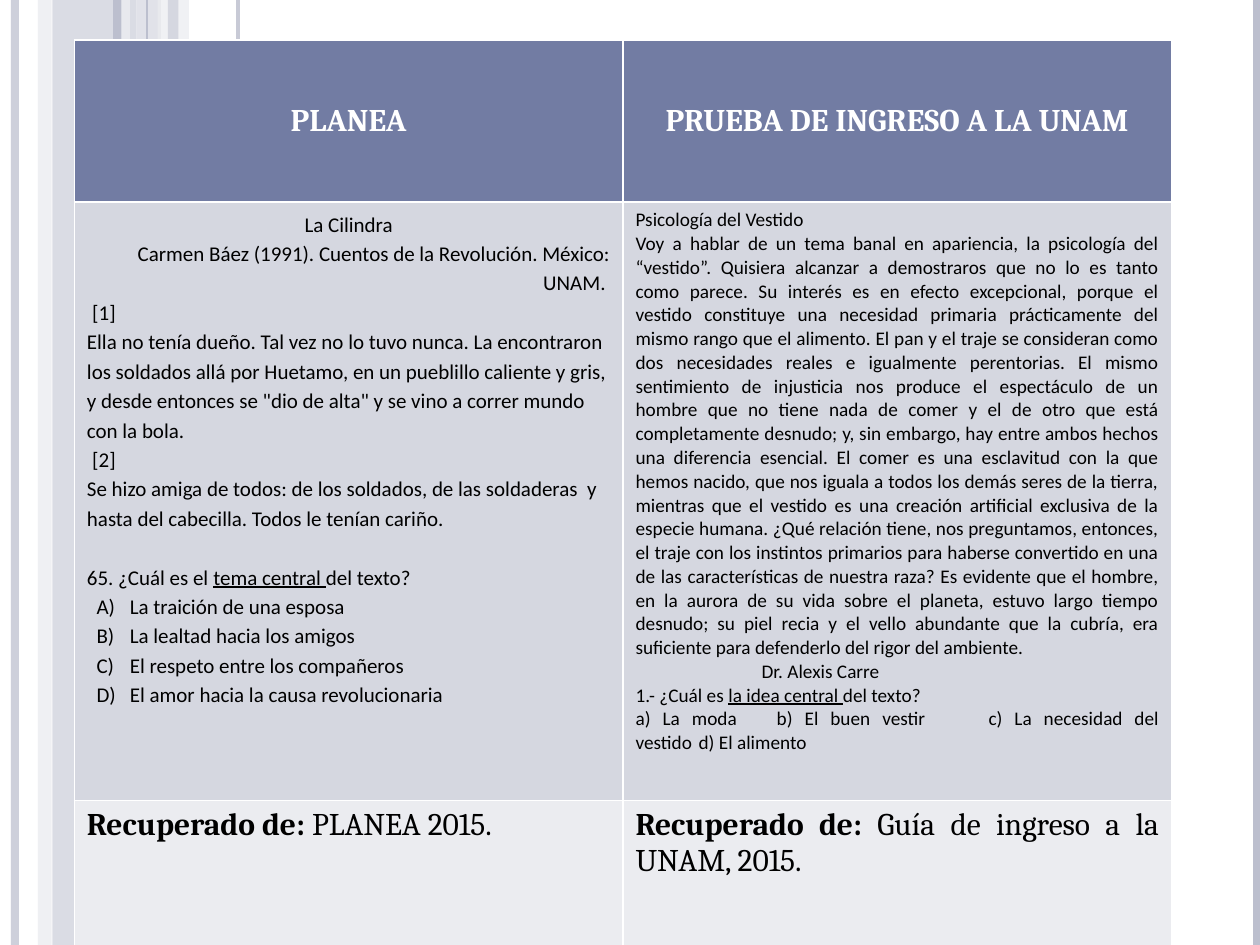
from dataclasses import dataclass

from pptx import Presentation
from pptx.dml.color import RGBColor
from pptx.enum import shapes, text
from pptx.oxml import ns, xmlchemy
from pptx.util import Pt

WIDTH, HEIGHT = 720, 540
HEX = {"head": "727CA3", "mid": "BCBFCE", "soft": "D5D7E0", "pale": "EBECF0",
       "ink": "000000", "white": "FFFFFF"}
ALIGN = text.PP_ALIGN


@dataclass
class Band:
    left: float
    width: float
    tone: str
    alpha: int


@dataclass
class Rule:
    x: float
    weight: float
    tone: str
    alpha: int = 100


@dataclass
class Para:
    """One paragraph; its words alternate plain and marked runs."""
    words: tuple[str, ...]
    align: ALIGN = ALIGN.LEFT
    margin: float = 0
    indent: float = 0
    before: float = 0


@dataclass
class Style:
    font: str
    size: float
    tone: str = "ink"
    mark: str = ""
    bold: bool = False
    space: float = 1.0


# Background stripes, from back to front
BANDS = [Band(30, 48, "mid", 54), Band(21.6, 8, "soft", 36),
         Band(78, 14, "soft", 70), Band(90, 18, "pale", 71)]
RULES = [Rule(8.5, 4.5, "mid", 73), Rule(72, 4.5, "pale", 83),
         Rule(67, 4.5, "mid"), Rule(136, 2.25, "mid", 82),
         Rule(84, 0.75, "mid"), Rule(718, 4.5, "mid")]
FRONT = Band(96, 6, "mid", 51)

# Text of the table
HEAD = Style("Cambria", 18, "white", bold=True)
STORY = Style("Calibri", 12, mark="underline", space=1.15)
ESSAY = Style("Calibri", 11, mark="underline")
SOURCE = Style("Cambria", 18, mark="bold")

OPTIONS = ["La traición de una esposa", "La lealtad hacia los amigos",
           "El respeto entre los compañeros",
           "El amor hacia la causa revolucionaria"]
CILINDRA = [
    Para(("La Cilindra",), ALIGN.CENTER),
    Para(("Carmen Báez (1991). Cuentos de la Revolución. México: UNAM. ",),
         ALIGN.RIGHT),
    Para(("[1]",), margin=3),
    Para(("Ella no tenía dueño. Tal vez no lo tuvo nunca. La encontraron los "
          "soldados allá por Huetamo, en un pueblillo caliente y gris, y desde "
          "entonces se \"dio de alta\" y se vino a correr mundo con la bola.",)),
    Para(("[2]",), margin=3),
    Para(("Se hizo amiga de todos: de los soldados, de las soldaderas  y hasta "
          "del cabecilla. Todos le tenían cariño.",)),
    Para(("65. ¿Cuál es el ", "tema central ", "del texto?"), before=16.8),
] + [Para((f"{key})\t{item}",), margin=24.5, indent=-19)
     for key, item in zip("ABCD", OPTIONS)]

# The long paragraph, in two halves
OPENING = (
    "Voy a hablar de un tema banal en apariencia, la psicología del “vestido”. "
    "Quisiera alcanzar a demostraros que no lo es tanto como parece. Su interés "
    "es en efecto excepcional, porque el vestido constituye una necesidad "
    "primaria prácticamente del mismo rango que el alimento. El pan y el traje "
    "se consideran como dos necesidades reales e igualmente perentorias. El "
    "mismo sentimiento de injusticia nos produce el espectáculo de un hombre "
    "que no tiene nada de comer y el de otro que está completamente desnudo; y, "
    "sin embargo, hay entre ambos hechos una diferencia esencial.")
CLOSING = (
    "El comer es una esclavitud con la que hemos nacido, que nos iguala a todos "
    "los demás seres de la tierra, mientras que el vestido es una creación "
    "artificial exclusiva de la especie humana. ¿Qué relación tiene, nos "
    "preguntamos, entonces, el traje con los instintos primarios para haberse "
    "convertido en una de las características de nuestra raza? Es evidente que "
    "el hombre, en la aurora de su vida sobre el planeta, estuvo largo tiempo "
    "desnudo; su piel recia y el vello abundante que la cubría, era suficiente "
    "para defenderlo del rigor del ambiente.")
VESTIDO = [Para(words, ALIGN.JUSTIFY) for words in (
    ("Psicología del Vestido",),
    (f"{OPENING} {CLOSING}",),
    ("\t\tDr. Alexis Carre",),
    ("1.- ¿Cuál es ", "la idea central ", "del texto?"),
    ("a) La moda\tb) El buen vestir\tc) La necesidad del vestido\td) El alimento",),
)]

# Each row: height, fill, then a style and paragraphs for each column
ROWS = [
    (92.5, "head", [(HEAD, [Para(("PLANEA",), ALIGN.CENTER)]),
                    (HEAD, [Para(("PRUEBA DE INGRESO A LA UNAM",), ALIGN.CENTER)])]),
    (342, "soft", [(STORY, CILINDRA), (ESSAY, VESTIDO)]),
    (83, "pale", [(SOURCE, [Para(("", "Recuperado de: ", "PLANEA 2015."))]),
                  (SOURCE, [Para(("", "Recuperado de: ",
                                  "Guía de ingreso a la UNAM, 2015."),
                                 ALIGN.JUSTIFY)])]),
]


def tint(name: str) -> RGBColor:
    return RGBColor.from_string(HEX[name])


def fade(shape, alpha: int) -> None:
    """Make the colour of a shape or line partly transparent."""
    if alpha < 100:
        color = next(shape._element.spPr.iter(ns.qn("a:srgbClr")))
        node = xmlchemy.OxmlElement("a:alpha")
        node.set("val", str(alpha * 1000))
        color.append(node)


def draw_band(slide, band: Band) -> None:
    shape = slide.shapes.add_shape(shapes.MSO_SHAPE.RECTANGLE, Pt(band.left), 0,
                                   Pt(band.width), Pt(HEIGHT))
    shape.shadow.inherit = False
    shape.line.fill.background()
    shape.fill.solid()
    shape.fill.fore_color.rgb = tint(band.tone)
    fade(shape, band.alpha)


def draw_rule(slide, rule: Rule) -> None:
    line = slide.shapes.add_connector(shapes.MSO_CONNECTOR.STRAIGHT, Pt(rule.x), 0,
                                      Pt(rule.x), Pt(HEIGHT))
    line.line.width = Pt(rule.weight)
    line.line.color.rgb = tint(rule.tone)
    fade(line, rule.alpha)
    line._element.spPr.append(xmlchemy.OxmlElement("a:effectLst"))


def write(cell, style: Style, paras: list[Para]) -> None:
    frame = cell.text_frame
    for num, para in enumerate(paras):
        line = frame.add_paragraph() if num else frame.paragraphs[0]
        line.alignment = para.align
        line.line_spacing = style.space
        line.space_before = Pt(para.before)
        props = line._p.get_or_add_pPr()
        props.set("marL", str(int(Pt(para.margin))))
        props.set("indent", str(int(Pt(para.indent))))
        for spot, words in enumerate(para.words):
            if not words:
                continue
            run = line.add_run()
            run.text = words
            run.font.name = style.font
            run.font.size = Pt(style.size)
            run.font.bold = style.bold
            run.font.color.rgb = tint(style.tone)
            if spot % 2:
                setattr(run.font, style.mark, True)


def draw_table(slide) -> None:
    total = sum(row[0] for row in ROWS)
    grid = slide.shapes.add_table(len(ROWS), 2, Pt(42.5), Pt(23),
                                  Pt(627), Pt(total)).table
    for row, (height, tone, cells) in enumerate(ROWS):
        grid.rows[row].height = Pt(height)
        for col, (style, paras) in enumerate(cells):
            cell = grid.cell(row, col)
            cell.fill.solid()
            cell.fill.fore_color.rgb = tint(tone)
            if row == 0:
                cell.vertical_anchor = text.MSO_ANCHOR.MIDDLE
            write(cell, style, paras)


def main() -> None:
    deck = Presentation()
    deck.slide_width, deck.slide_height = Pt(WIDTH), Pt(HEIGHT)
    slide = deck.slides.add_slide(deck.slide_layouts[6])
    for band in BANDS:
        draw_band(slide, band)
    for rule in RULES:
        draw_rule(slide, rule)
    draw_band(slide, FRONT)
    draw_table(slide)
    deck.save("out.pptx")


if __name__ == "__main__":
    main()
